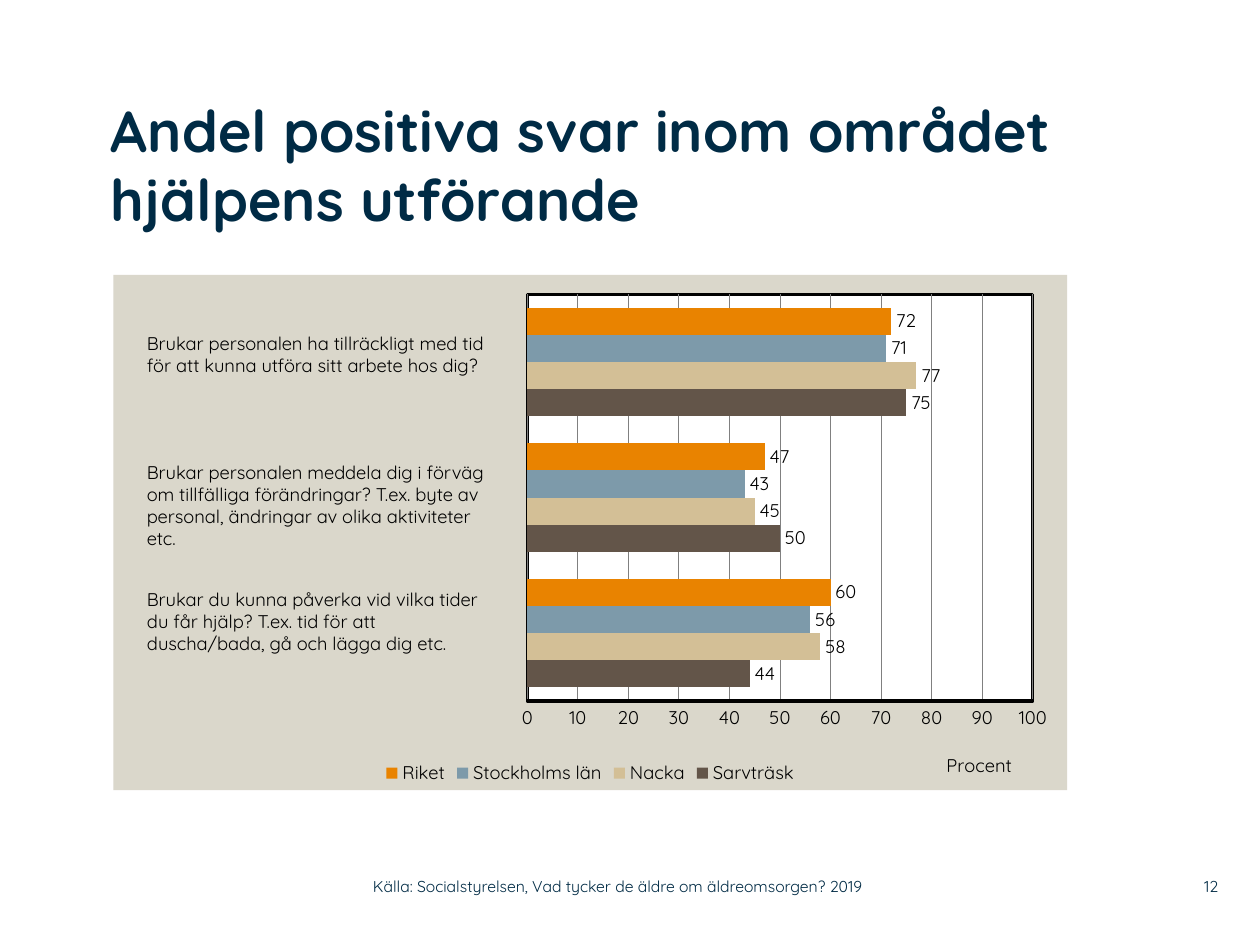
import pptx
import pptx.chart.data
import pptx.dml.color
import pptx.enum.chart
import pptx.enum.text
import pptx.oxml
import pptx.oxml.ns
import pptx.util

Pt = pptx.util.Pt
RGB = pptx.dml.color.RGBColor
qn = pptx.oxml.ns.qn
Align = pptx.enum.text.PP_ALIGN
Anchor = pptx.enum.text.MSO_ANCHOR

NAVY = RGB(0x00, 0x2B, 0x45)
BLACK = RGB(0x00, 0x00, 0x00)
WHITE = RGB(0xFF, 0xFF, 0xFF)
GREY = RGB(0x80, 0x80, 0x80)
SAND = RGB(0xDA, 0xD7, 0xCB)
BROWN = RGB(0x63, 0x55, 0x49)
BEIGE = RGB(0xD3, 0xBF, 0x96)
BLUE = RGB(0x7D, 0x9A, 0xAA)
ORANGE = RGB(0xE9, 0x83, 0x00)
NS = pptx.oxml.ns.nsdecls("c", "a")


def area_format(fill, line=None, width=2):
    """Fill and outline for the chart or its plot area."""
    outline = f'<a:solidFill><a:srgbClr val="{line}"/></a:solidFill>' if line else "<a:noFill/>"
    return pptx.oxml.parse_xml(
        f'<c:spPr {NS}><a:solidFill><a:srgbClr val="{fill}"/></a:solidFill>'
        f'<a:ln w="{int(Pt(width))}">{outline}</a:ln></c:spPr>')


def manual_layout(x, y, w=None, h=None):
    """Place a chart part by fractions of the chart's size."""
    parts = [("xMode", "edge"), ("yMode", "edge"), ("x", x), ("y", y)]
    if w is not None:
        parts = [("layoutTarget", "inner")] + parts + [("w", w), ("h", h)]
    tags = "".join(f'<c:{tag} val="{value}"/>' for tag, value in parts)
    return pptx.oxml.parse_xml(
        f"<c:layout {NS}><c:manualLayout>{tags}</c:manualLayout></c:layout>")


def set_layout(parent, layout, index):
    for old in parent.findall(qn("c:layout")):
        parent.remove(old)
    parent.insert(index, layout)


class SlideWriter:
    font = "Quicksand"
    body_size = 10.5

    def __init__(self, slide):
        self.slide = slide

    def style(self, font, size, color, bold=False):
        font.name = self.font
        font.size = Pt(size)
        font.bold = bold
        font.color.rgb = color

    def text(self, box, paragraphs, size=body_size, color=BLACK, bold=False,
             align=Align.LEFT, anchor=Anchor.TOP, inset=None):
        frame = self.slide.shapes.add_textbox(*map(Pt, box)).text_frame
        frame.word_wrap = True
        frame.vertical_anchor = anchor
        if inset is not None:
            frame.margin_left = frame.margin_right = Pt(inset)
            frame.margin_top = frame.margin_bottom = Pt(inset)
        for number, words in enumerate(paragraphs):
            paragraph = frame.add_paragraph() if number else frame.paragraphs[0]
            paragraph.alignment = align
            run = paragraph.add_run()
            run.text = words
            self.style(run.font, size, color, bold)

    def bar_chart(self, box, categories, series, axis_title):
        data = pptx.chart.data.CategoryChartData()
        data.categories = categories
        for name, values, _ in series:
            data.add_series(name, values)
        kind = pptx.enum.chart.XL_CHART_TYPE.BAR_CLUSTERED
        chart = self.slide.shapes.add_chart(kind, *map(Pt, box), data).chart
        self.style(chart.font, self.body_size, BLACK)
        chart.has_title = False

        # Bars and value labels
        plot = chart.plots[0]
        plot.gap_width = 100
        plot.overlap = 0
        plot.vary_by_categories = False
        for bars, (_, _, color) in zip(plot.series, series):
            bars.format.fill.solid()
            bars.format.fill.fore_color.rgb = color
            bars.invert_if_negative = False
            labels = bars.data_labels
            labels.show_value = True
            labels.position = pptx.enum.chart.XL_LABEL_POSITION.OUTSIDE_END
            self.style(labels.font, self.body_size, BLACK)

        # Axes
        chart.category_axis.visible = False
        axis = chart.value_axis
        axis.minimum_scale, axis.maximum_scale, axis.major_unit = 0, 100, 10
        axis.major_tick_mark = pptx.enum.chart.XL_TICK_MARK.NONE
        axis.format.line.color.rgb = BLACK
        axis.format.line.width = Pt(2)
        axis.major_gridlines.format.line.color.rgb = GREY
        axis.major_gridlines.format.line.width = Pt(0.5)
        self.style(axis.tick_labels.font, self.body_size, BLACK)
        run = axis.axis_title.text_frame.paragraphs[0].add_run()
        run.text = axis_title
        self.style(run.font, self.body_size, BLACK)
        set_layout(axis.axis_title._element, manual_layout(0.87, 0.92), 1)

        # Legend
        chart.has_legend = True
        chart.legend.position = pptx.enum.chart.XL_LEGEND_POSITION.BOTTOM
        chart.legend.include_in_layout = False
        self.style(chart.legend.font, self.body_size, BLACK)

        # Backgrounds and plot position
        space = chart._chartSpace
        plot_area = space.chart.plotArea
        set_layout(plot_area, manual_layout(0.434, 0.038, 0.53, 0.789), 0)
        plot_area.append(area_format(WHITE, BLACK))
        space.chart.addnext(area_format(SAND))


def main():
    deck = pptx.Presentation()
    deck.slide_width, deck.slide_height = Pt(720), Pt(540)
    writer = SlideWriter(deck.slides.add_slide(deck.slide_layouts[6]))

    # Survey results
    writer.bar_chart((64.8, 157, 545, 294.5), ["1", "2", "3"], [
        ("Sarvträsk", (44, 50, 75), BROWN),
        ("Nacka", (58, 45, 77), BEIGE),
        ("Stockholms län", (56, 43, 71), BLUE),
        ("Riket", (60, 47, 72), ORANGE),
    ], "Procent")

    # Title
    writer.text((63.4, 54, 547.2, 102.2),
                ["Andel positiva svar inom området hjälpens utförande"],
                size=33, color=NAVY, bold=True, inset=0)

    # Questions beside the bars
    questions = [
        (186.5, 32.4, ["Brukar personalen ha tillräckligt med tid",
                       "för att kunna utföra sitt arbete hos dig?"]),
        (260, 58.3, ["Brukar personalen meddela dig i förväg om tillfälliga "
                     "förändringar? T.ex. byte av personal, ändringar av "
                     "olika aktiviteter etc."]),
        (332.6, 45.4, ["Brukar du kunna påverka vid vilka tider",
                       "du får hjälp? T.ex. tid för att",
                       "duscha/bada, gå och lägga dig etc."]),
    ]
    for top, height, lines in questions:
        writer.text((76.8, top, 214, height), lines)

    # Footer
    footer = dict(size=9, color=NAVY, anchor=Anchor.MIDDLE, inset=0)
    writer.text((662.4, 496, 33.8, 20.9), ["12"], align=Align.RIGHT, **footer)
    writer.text((213.1, 496, 319, 20.9),
                ["Källa: Socialstyrelsen, Vad tycker de äldre om äldreomsorgen? 2019"],
                **footer)

    deck.save("out.pptx")


if __name__ == "__main__":
    main()
